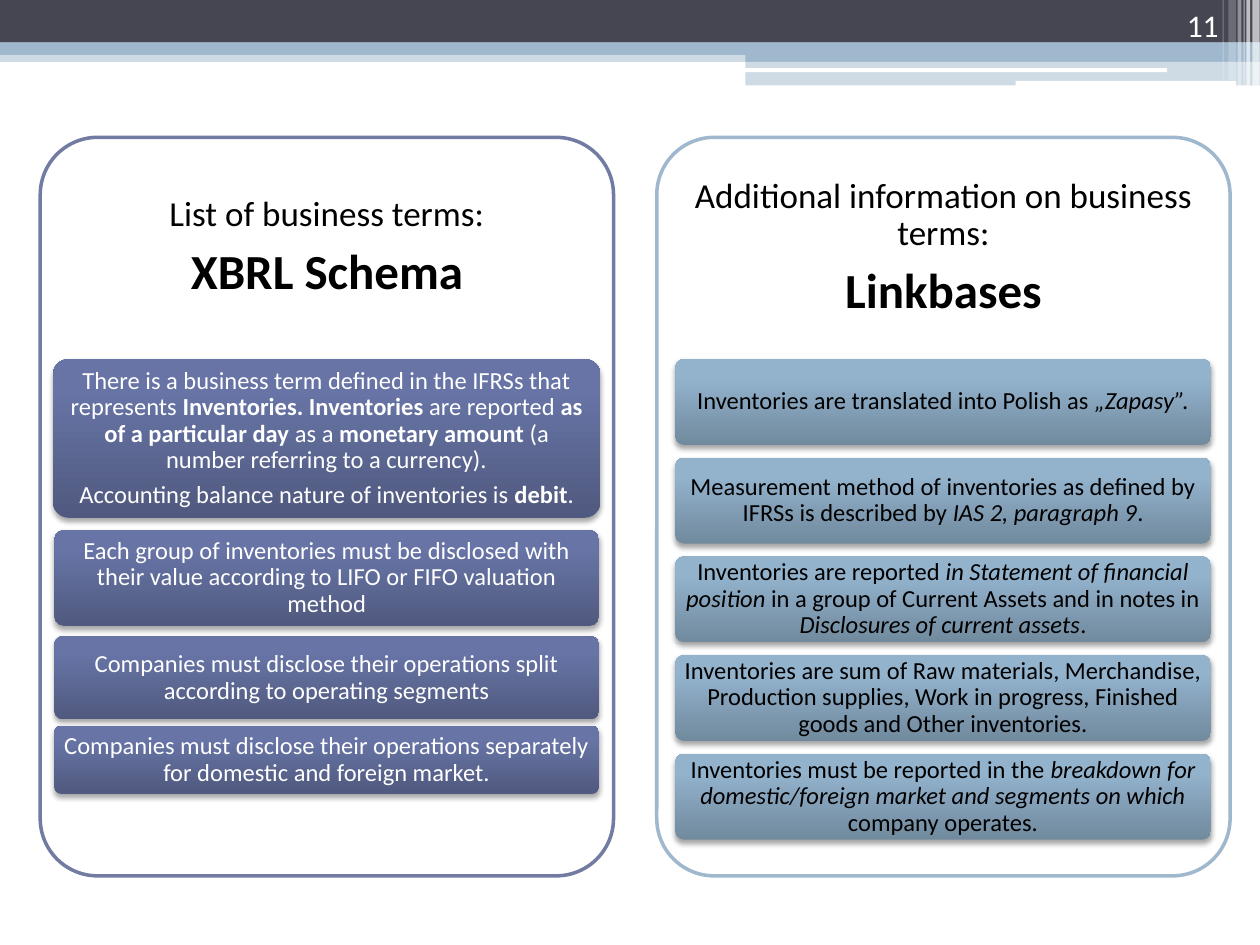
from copy import deepcopy

from lxml import etree
from pptx import Presentation
from pptx.dml.color import RGBColor
from pptx.enum.shapes import MSO_SHAPE
from pptx.enum.text import MSO_ANCHOR, PP_ALIGN
from pptx.oxml import parse_xml
from pptx.oxml.ns import nsdecls, qn
from pptx.util import Pt

RECTANGLE = MSO_SHAPE.RECTANGLE
ROUNDED = MSO_SHAPE.ROUNDED_RECTANGLE
MIDDLE = MSO_ANCHOR.MIDDLE
BOTTOM = MSO_ANCHOR.BOTTOM
CENTER = PP_ALIGN.CENTER
RIGHT = PP_ALIGN.RIGHT

COLORS = {
    "white": "FFFFFF", "black": "000000", "slate": "464653",
    "blue": "9FB8CD", "indigo": "727CA3",
}
INDIGO_STOPS = [(0, "50597F"), (0.8, "6774A5"), (1, "6774A7")]
BLUE_STOPS = [(0, "718A9E"), (0.8, "93B3CD"), (1, "93B4CF")]

SHADOW = (
    f'<a:effectLst {nsdecls("a")}><a:outerShdw blurRad="{Pt(3.1)}" dist="{Pt(1.8)}" '
    'dir="5400000" rotWithShape="0"><a:srgbClr val="000000"><a:alpha val="35000"/>'
    '</a:srgbClr></a:outerShdw></a:effectLst>'
)

presentation = Presentation()
presentation.slide_width = Pt(720)
presentation.slide_height = Pt(540)
slide = presentation.slides.add_slide(presentation.slide_layouts[6])


def add_box(kind, bounds, color, opacity=100):
    shape = slide.shapes.add_shape(kind, *map(Pt, bounds))
    shape.shadow.inherit = False
    shape.line.fill.background()
    shape.fill.solid()
    shape.fill.fore_color.rgb = RGBColor.from_string(COLORS[color])
    if opacity < 100:
        color_element = shape._element.spPr.find(".//" + qn("a:srgbClr"))
        etree.SubElement(color_element, qn("a:alpha"), val=str(opacity * 1000))
    return shape


def write_text(shape, paragraphs, color, insets, emphasis="bold", anchor=MIDDLE, alignment=CENTER):
    frame = shape.text_frame
    horizontal, vertical = map(Pt, insets)
    frame_format = {
        "word_wrap": True, "vertical_anchor": anchor,
        "margin_left": horizontal, "margin_right": horizontal,
        "margin_top": vertical, "margin_bottom": vertical,
    }
    for name, value in frame_format.items():
        setattr(frame, name, value)
    for index, (text, size, bold) in enumerate(paragraphs):
        paragraph = frame.add_paragraph() if index else frame.paragraphs[0]
        paragraph_format = {
            "alignment": alignment, "line_spacing": 0.9, "space_after": Pt(size * 0.35),
        }
        for name, value in paragraph_format.items():
            setattr(paragraph, name, value)
        for position, part in enumerate(text.split("*")):
            if not part:
                continue
            run = paragraph.add_run()
            run.text = part
            font_format = {"name": "Calibri", "size": Pt(size), "bold": bold}
            if position % 2:
                font_format[emphasis] = True
            for name, value in font_format.items():
                setattr(run.font, name, value)
            run.font.color.rgb = RGBColor.from_string(COLORS[color])


header_bars = [
    (RECTANGLE, (0, 28.8, 720, 6.6), "blue", 50),
    (RECTANGLE, (0, 0, 720, 24.4), "slate", 100),
    (RECTANGLE, (0, 24.2, 720, 7.2), "blue", 100),
    (RECTANGLE, (426, 28, 294, 7.2), "blue", 100),
    (RECTANGLE, (426, 34.6, 294, 14.2), "blue", 50),
    (ROUNDED, (425.8, 39, 241.2, 2.2), "white", 100),
    (ROUNDED, (580.4, 46.2, 126, 2.9), "white", 100),
]
for kind, bounds, color, opacity in header_bars:
    add_box(kind, bounds, color, opacity)

stripes = [
    (715.6, 4.2, 49, 65), (712.2, 2.2, 49, 65), (710.6, 0.7, 49, 60),
    (707.2, 2.2, 49, 40), (702, 4.3, 46, 20), (698.6, 0.7, 46, 30),
]
for left, width, height, opacity in stripes:
    add_box(RECTANGLE, (left, 0, width, height), "white", opacity)

slide_number = slide.shapes.add_textbox(Pt(643.7), Pt(0), Pt(59.8), Pt(28.8))
write_text(slide_number, [("11", 18, False)], "white", (7.2, 3.6), anchor=BOTTOM, alignment=RIGHT)

right_texts = [
    "Inventories are translated into Polish as *„Zapasy”.*",
    "Measurement method of inventories as defined by IFRSs is described by *IAS 2, paragraph 9*.",
    "Inventories are reported *in Statement of financial position* in a group of Current Assets "
    "and in notes in *Disclosures of current assets*.",
    "Inventories are sum of Raw materials, Merchandise, Production supplies, Work in progress, "
    "Finished goods and Other inventories.",
    "Inventories must be reported in the *breakdown for domestic/foreign market and segments "
    "on which *company operates.",
]
columns = [
    {
        "left": 23, "line": "indigo", "stops": INDIGO_STOPS, "text": "white",
        "emphasis": "bold", "inset": 0,
        "heading": ["List of business terms:", "XBRL Schema"],
        "cards": [
            ((30.2, 205.2, 313, 90.7), [
                "There is a business term defined in the IFRSs that represents "
                "*Inventories. Inventories* are reported *as of a particular day *as a "
                "*monetary amount *(a number referring to a currency).",
                "Accounting balance nature of inventories is *debit*.",
            ]),
            ((31, 303, 311.4, 54.7), [
                "Each group of inventories must be disclosed with their value "
                "according to LIFO or FIFO valuation method",
            ]),
            ((31, 363.6, 311.4, 47.5), [
                "Companies must disclose their operations split according to operating segments",
            ]),
            ((31, 414.8, 311.4, 38.9), [
                "Companies must disclose their operations separately for domestic "
                "and foreign market.",
            ]),
        ],
    },
    {
        "left": 375.3, "line": "blue", "stops": BLUE_STOPS, "text": "black",
        "emphasis": "italic", "inset": 5.8,
        "heading": ["Additional information on business terms:", "Linkbases"],
        "cards": [
            ((385.9, 205.2 + 56.4 * index, 306, 49), [text])
            for index, text in enumerate(right_texts)
        ],
    },
]

for column in columns:
    panel = add_box(ROUNDED, (column["left"], 78.5, 327.6, 422), "white")
    panel.adjustments[0] = 0.1
    panel.line.color.rgb = RGBColor.from_string(COLORS[column["line"]])
    panel.line.width = Pt(2)

    heading = slide.shapes.add_textbox(Pt(column["left"]), Pt(78.5), Pt(327.6), Pt(126.7))
    introduction, title = column["heading"]
    write_text(heading, [(introduction, 20, False), (title, 28, True)], "black", (5.8, column["inset"]))

    for bounds, texts in column["cards"]:
        card = add_box(ROUNDED, bounds, "white")
        card.adjustments[0] = 0.1
        card.fill.gradient()
        card.fill.gradient_angle = 90
        properties = card._element.spPr
        stop_list = properties.find(".//" + qn("a:gsLst"))
        stop_list.append(deepcopy(stop_list[-1]))
        for stop, (position, color) in zip(card.fill.gradient_stops, column["stops"]):
            stop.position = position
            stop.color.rgb = RGBColor.from_string(color)
        properties.replace(properties.find(qn("a:effectLst")), parse_xml(SHADOW))
        paragraphs = [(text, 14, False) for text in texts]
        write_text(card, paragraphs, column["text"], (2.8, 2.1), column["emphasis"])

presentation.save("out.pptx")
